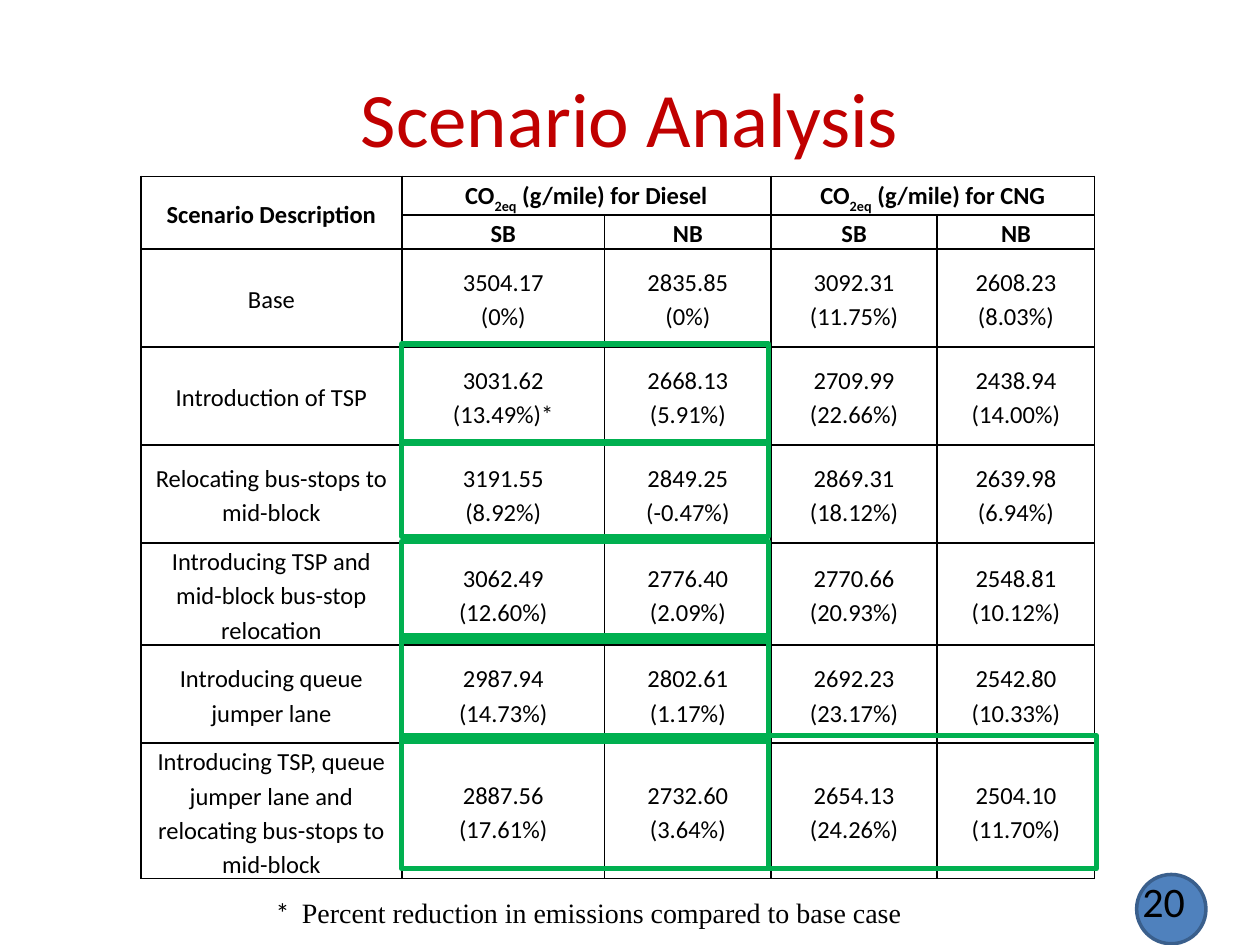
import pptx
import pptx.dml.color
import pptx.enum.shapes
import pptx.enum.text
import pptx.oxml.ns
import pptx.util
from lxml import etree

Pt = pptx.util.Pt
Align = pptx.enum.text.PP_ALIGN
Anchor = pptx.enum.text.MSO_ANCHOR
Shape = pptx.enum.shapes.MSO_SHAPE
qn = pptx.oxml.ns.qn


def color(hex_code):
    return pptx.dml.color.RGBColor.from_string(hex_code)


def write(paragraph, text, size=14, font="Calibri", ink="000000", bold=False, subscript=False):
    run = paragraph.add_run()
    run.text = text
    run.font.size = Pt(size)
    run.font.name = font
    run.font.bold = bold
    run.font.color.rgb = color(ink)
    if subscript:
        run.font._element.set("baseline", "-25000")


class SlideBuilder:
    GREEN = "00B050"
    RED = "C00000"
    BLACK = "000000"

    def __init__(self, slide):
        self.slide = slide

    def text_box(self, left, top, width, height, align=Align.LEFT, anchor=Anchor.TOP):
        """Add a wrapping text box and return its first paragraph."""
        frame = self.slide.shapes.add_textbox(Pt(left), Pt(top), Pt(width), Pt(height)).text_frame
        frame.word_wrap = True
        frame.vertical_anchor = anchor
        frame.paragraphs[0].alignment = align
        return frame.paragraphs[0]

    def shape(self, kind, left, top, width, height, line, line_width, fill=None):
        shape = self.slide.shapes.add_shape(kind, Pt(left), Pt(top), Pt(width), Pt(height))
        shape.shadow.inherit = False
        if fill:
            shape.fill.solid()
            shape.fill.fore_color.rgb = color(fill)
        else:
            shape.fill.background()
        shape.line.color.rgb = color(line)
        shape.line.width = Pt(line_width)

    def highlight(self, left, top, width, height):
        self.shape(Shape.RECTANGLE, left, top, width, height, self.GREEN, 3)

    def table(self, left, top, widths, heights):
        table = self.slide.shapes.add_table(
            len(heights), len(widths), Pt(left), Pt(top), Pt(sum(widths)), Pt(sum(heights))).table
        table.first_row = table.horz_banding = False
        for column, width in zip(table.columns, widths):
            column.width = Pt(width)
        for row, height in zip(table.rows, heights):
            row.height = Pt(height)
        for cell in table.iter_cells():
            self.style_cell(cell)
        return table

    def style_cell(self, cell):
        cell.vertical_anchor = Anchor.MIDDLE
        cell.margin_left = cell.margin_right = Pt(5)
        cell.margin_top = cell.margin_bottom = 0
        properties = cell._tc.get_or_add_tcPr()
        for side in ("a:lnL", "a:lnR", "a:lnT", "a:lnB"):
            border = etree.SubElement(properties, qn(side), w=str(Pt(1)))
            fill = etree.SubElement(border, qn("a:solidFill"))
            etree.SubElement(fill, qn("a:srgbClr"), val=self.BLACK)
        cell.fill.background()

    def fill_cell(self, cell, *lines, bold=False):
        """Write each line as a paragraph; a line is a list of (text, subscript)."""
        for index, line in enumerate(lines):
            paragraph = cell.text_frame.paragraphs[0] if index == 0 else cell.text_frame.add_paragraph()
            paragraph.alignment = Align.CENTER
            paragraph.line_spacing = 1.15
            for text, subscript in line:
                write(paragraph, text, bold=bold, subscript=subscript)


SCENARIOS = [
    ("Base", "3504.17 (0%)", "2835.85 (0%)", "3092.31 (11.75%)", "2608.23 (8.03%)"),
    ("Introduction of TSP",
     "3031.62 (13.49%)*", "2668.13 (5.91%)", "2709.99 (22.66%)", "2438.94 (14.00%)"),
    ("Relocating bus-stops to mid-block",
     "3191.55 (8.92%)", "2849.25 (-0.47%)", "2869.31 (18.12%)", "2639.98 (6.94%)"),
    ("Introducing TSP and mid-block bus-stop relocation",
     "3062.49 (12.60%)", "2776.40 (2.09%)", "2770.66 (20.93%)", "2548.81 (10.12%)"),
    ("Introducing queue jumper lane",
     "2987.94 (14.73%)", "2802.61 (1.17%)", "2692.23 (23.17%)", "2542.80 (10.33%)"),
    ("Introducing TSP, queue jumper lane and relocating bus-stops to mid-block",
     "2887.56 (17.61%)", "2732.60 (3.64%)", "2654.13 (24.26%)", "2504.10 (11.70%)"),
]


def main():
    deck = pptx.Presentation()
    deck.slide_width, deck.slide_height = Pt(720), Pt(540)
    builder = SlideBuilder(deck.slides.add_slide(deck.slide_layouts[6]))

    # Title
    title = builder.text_box(36, 21.6, 648, 90, Align.CENTER, Anchor.MIDDLE)
    write(title, "Scenario Analysis", size=44, ink=builder.RED)

    # Emissions table: two header rows, then one row per scenario
    emissions = builder.table(80.6, 100.8, [149, 116, 95, 95, 90],
                              [19.5, 19.5, 56, 56, 56, 58.5, 56, 77])
    emissions.cell(0, 0).merge(emissions.cell(1, 0))
    builder.fill_cell(emissions.cell(0, 0), [("Scenario Description", False)], bold=True)
    for column, fuel in ((1, "Diesel"), (3, "CNG")):
        emissions.cell(0, column).merge(emissions.cell(0, column + 1))
        heading = [("CO", False), ("2eq", True), (f" (g/mile) for {fuel}", False)]
        builder.fill_cell(emissions.cell(0, column), heading, bold=True)
        for offset, direction in enumerate(("SB", "NB")):
            builder.fill_cell(emissions.cell(1, column + offset), [(direction, False)], bold=True)
    for row, (description, *results) in enumerate(SCENARIOS, start=2):
        builder.fill_cell(emissions.cell(row, 0), [(description, False)])
        for column, result in enumerate(results, start=1):
            lines = [[(part, False)] for part in result.split()]
            builder.fill_cell(emissions.cell(row, column), *lines)

    # Footnote with a hanging asterisk
    footnote = builder.text_box(150.5, 508.3, 556, 26.6)
    indents = footnote._p.get_or_add_pPr()
    indents.set("marL", str(Pt(15)))
    indents.set("indent", str(-Pt(15)))
    write(footnote, "*\t", size=16)
    write(footnote, "Percent reduction in emissions compared to base case",
          size=16, font="Times New Roman")

    # Page number on its disc
    builder.shape(Shape.OVAL, 649.5, 499.7, 39.6, 39.6, "3A5F8C", 2, fill="4F81BD")
    page_number = builder.text_box(516.2, 500.4, 168, 28.8, Align.RIGHT, Anchor.MIDDLE)
    write(page_number, "20", size=24)

    # Highlights: diesel results of each scenario, CNG results of the last
    for top, height in ((196.5, 57), (252.5, 54), (309.5, 57), (363.5, 60), (420.5, 76)):
        builder.highlight(229.5, top, 209.5, height)
    builder.highlight(439, 420.5, 187.5, 76)

    deck.save("out.pptx")


if __name__ == "__main__":
    main()
